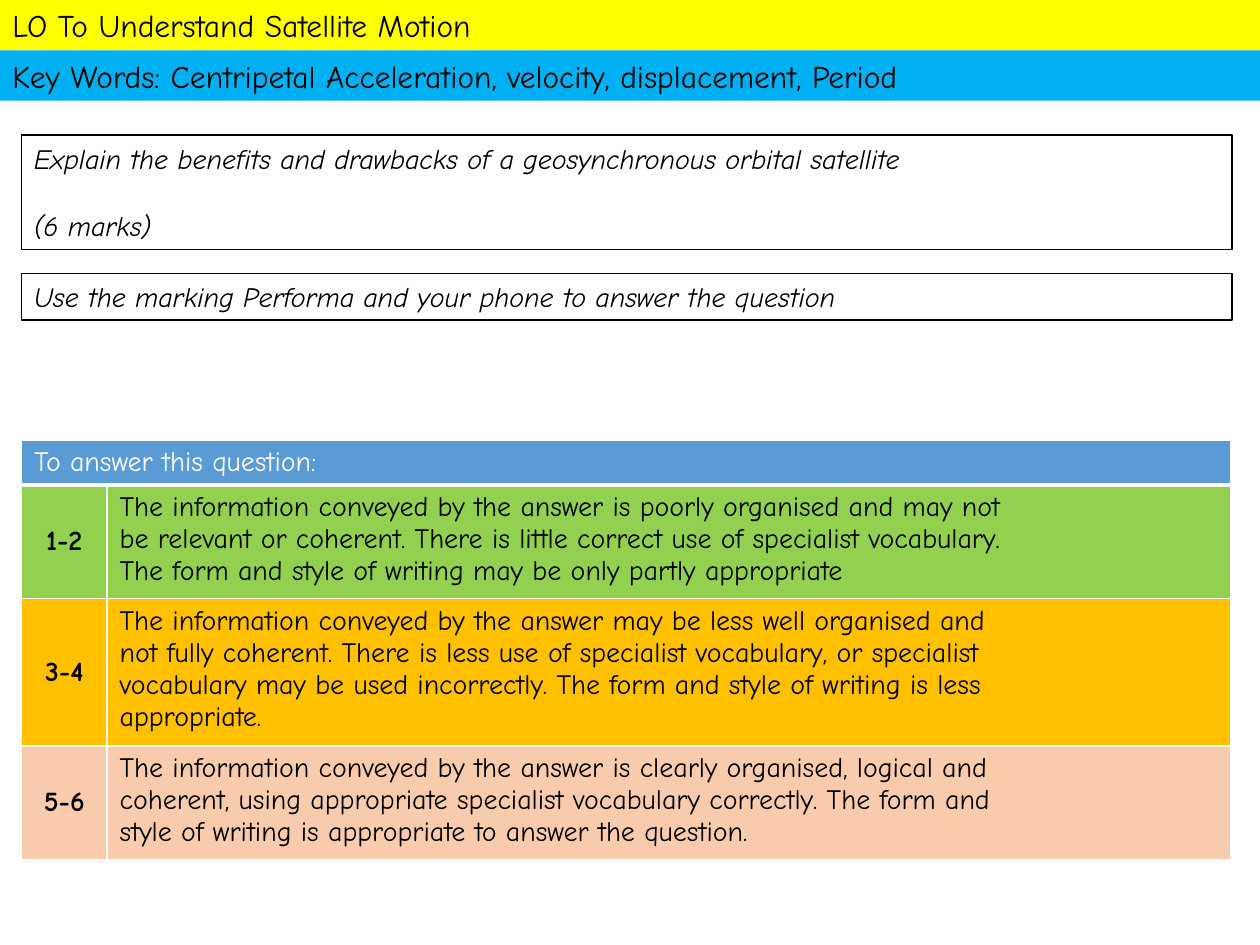
from lxml.etree import SubElement
from pptx import Presentation
from pptx.dml.color import RGBColor
from pptx.enum.shapes import MSO_SHAPE as Shape
from pptx.enum.text import MSO_ANCHOR as Anchor, PP_ALIGN as Align
from pptx.oxml.ns import qn
from pptx.util import Inches, Pt

FONT = "Comic Neue"
COLOURS = {
    "objective": "FFFF00", "keywords": "00B0F0", "header": "5B9BD5",
    "low": "92D050", "middle": "FFC000", "high": "F8CBAD",
    "black": "000000", "white": "FFFFFF",
}
BANDS = [
    ("1-2", "low", 0.9, [
        "The information conveyed by the answer is poorly organised and may not",
        "be relevant or coherent. There is little correct use of specialist vocabulary.",
        "The form and style of writing may be only partly appropriate"]),
    ("3-4", "middle", 1.17, [
        "The information conveyed by the answer may be less well organised and",
        "not fully coherent. There is less use of specialist vocabulary, or specialist",
        "vocabulary may be used incorrectly. The form and style of writing is less",
        "appropriate."]),
    ("5-6", "high", 0.9, [
        "The information conveyed by the answer is clearly organised, logical and",
        "coherent, using appropriate specialist vocabulary correctly. The form and",
        "style of writing is appropriate to answer the question."]),
]


def colour(name):
    """Return the named colour."""
    return RGBColor.from_string(COLOURS[name])


def write(frame, lines, size=16, ink="black", bold=False, italic=False, align=Align.LEFT):
    """Fill a text frame with one paragraph per line."""
    frame.text = "\n".join(lines)
    for para in frame.paragraphs:
        para.alignment = align
        for span in para.runs:
            span.font.name = FONT
            span.font.size = Pt(size)
            span.font.bold = bold
            span.font.italic = italic
            span.font.color.rgb = colour(ink)


def add_panel(page, left, top, width, height, fill, lines, outline=None, **style):
    """Draw a filled rectangle holding text and return its text frame."""
    panel = page.shapes.add_shape(
        Shape.RECTANGLE, Inches(left), Inches(top), Inches(width), Inches(height))
    panel.shadow.inherit = False
    panel.fill.solid()
    panel.fill.fore_color.rgb = colour(fill)
    if outline:
        panel.line.color.rgb = colour(outline)
        panel.line.width = Pt(1)
    else:
        panel.line.fill.background()
    frame = panel.text_frame
    frame.word_wrap = True
    frame.vertical_anchor = Anchor.TOP
    write(frame, lines, **style)
    return frame


def add_banners(page, left, top, width, height):
    """Stack the objective and key word banners."""
    banners = [
        ("objective", "LO To Understand Satellite Motion"),
        ("keywords", "Key Words: Centripetal Acceleration, velocity, displacement, Period"),
    ]
    for index, (fill, text) in enumerate(banners):
        add_panel(page, left, top + index * height, width, height, fill, [text], size=18)


def add_question(page, left, top, width):
    """Place the exam question with the instruction below it."""
    question = add_panel(
        page, left, top, width, 0.91, "white",
        ["Explain the benefits and drawbacks of a geosynchronous orbital satellite",
         "(6 marks)"], outline="black", italic=True)
    question.paragraphs[1].space_before = Pt(19.2)
    add_panel(
        page, left, top + 1.1, width, 0.37, "white",
        ["Use the marking Performa and your phone to answer the question"],
        outline="black", italic=True)


def paint_cell(cell, fill, top=1, bottom=1):
    """Give a cell its white borders and its fill."""
    properties = cell._tc.get_or_add_tcPr()
    for side, width in (("L", 1), ("R", 1), ("T", top), ("B", bottom)):
        border = SubElement(properties, qn(f"a:ln{side}"), w=str(Pt(width)))
        solid = SubElement(border, qn("a:solidFill"))
        SubElement(solid, qn("a:srgbClr"), val=COLOURS["white"])
    cell.fill.solid()
    cell.fill.fore_color.rgb = colour(fill)


def add_mark_scheme(page, left, top, width):
    """Build the mark scheme table."""
    heights = [0.36] + [band[2] for band in BANDS]
    table = page.shapes.add_table(
        len(heights), 2, Inches(left), Inches(top),
        Inches(width), Inches(sum(heights))).table
    for column, size in zip(table.columns, (0.68, width - 0.68)):
        column.width = Inches(size)
    for row, height in zip(table.rows, heights):
        row.height = Inches(height)
    header = table.cell(0, 0)
    header.merge(table.cell(0, 1))
    write(header.text_frame, ["To answer this question:"], ink="white")
    for cell in table.rows[0].cells:
        paint_cell(cell, "header", bottom=3)
    for index, (marks, fill, _, lines) in enumerate(BANDS, start=1):
        label, detail = table.rows[index].cells
        write(label.text_frame, [marks], bold=True, align=Align.CENTER)
        label.vertical_anchor = Anchor.MIDDLE
        write(detail.text_frame, lines)
        for cell in (label, detail):
            paint_cell(cell, fill, top=3 if index == 1 else 1)


def main():
    """Build and save the slide."""
    deck = Presentation()
    deck.slide_width, deck.slide_height = Inches(10), Inches(7.5)
    page = deck.slides.add_slide(deck.slide_layouts[6])
    add_banners(page, 0, 0, 10, 0.4)
    add_question(page, 0.17, 1.07, 9.61)
    add_mark_scheme(page, 0.17, 3.49, 9.6)
    deck.save("out.pptx")


if __name__ == "__main__":
    main()
